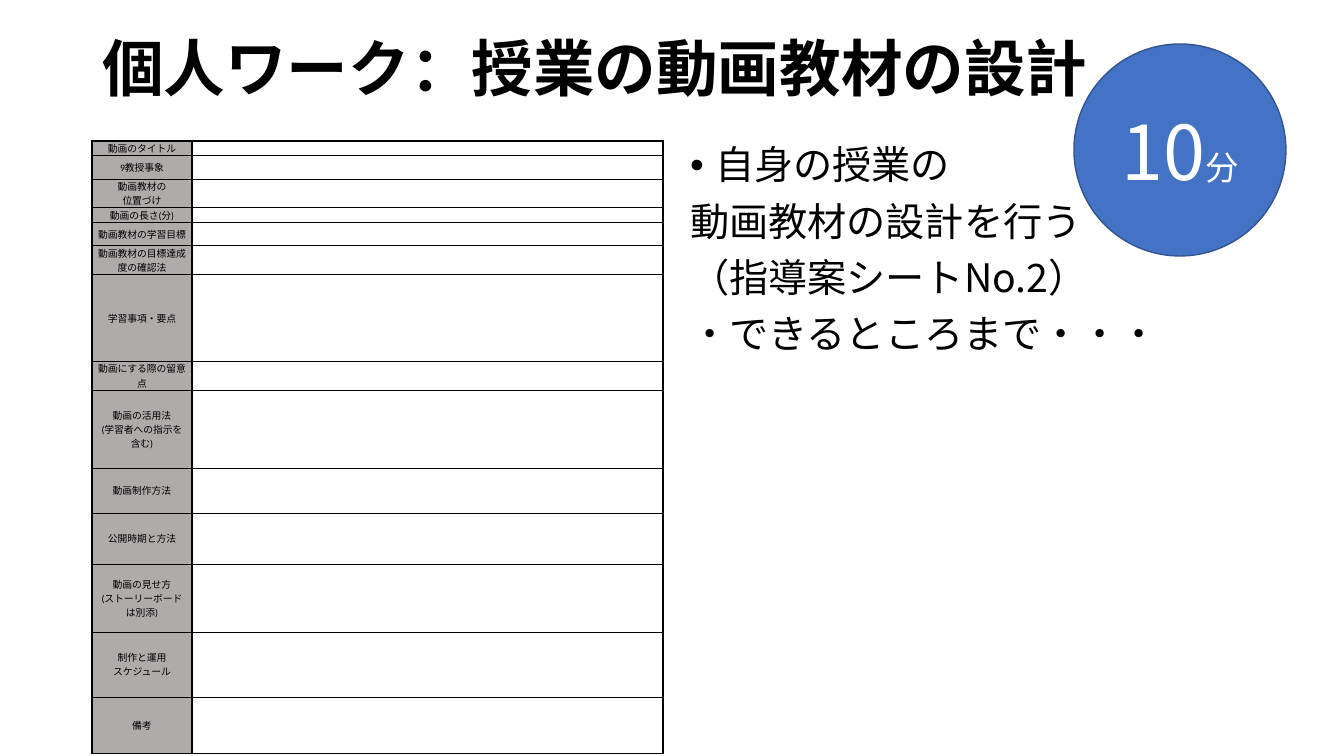
import pptx
import pptx.dml.color
import pptx.enum.shapes
import pptx.enum.text
import pptx.oxml.ns
import pptx.util
from lxml import etree

PX = 914400 / 100.8
JAPANESE = "Noto Sans CJK JP"
LEFT = pptx.enum.text.PP_ALIGN.LEFT
CENTER = pptx.enum.text.PP_ALIGN.CENTER
MIDDLE = pptx.enum.text.MSO_ANCHOR.MIDDLE

WORKSHEET_ROWS = [
    ("動画のタイトル", 14),
    ("9教授事象", 24),
    ("動画教材の\n位置づけ", 28),
    ("動画の長さ(分)", 15),
    ("動画教材の学習目標", 23),
    ("動画教材の目標達成度の確認法", 29),
    ("学習事項・要点", 87),
    ("動画にする際の留意点", 29),
    ("動画の活用法\n(学習者への指示を含む)", 78),
    ("動画制作方法", 45),
    ("公開時期と方法", 51),
    ("動画の見せ方\n(ストーリーボードは別添)", 68),
    ("制作と運用\nスケジュール", 65),
    ("備考", 56),
]
INSTRUCTIONS = [
    "自身の授業の",
    "動画教材の設計を行う",
    "（指導案シートNo.2）",
    "・できるところまで・・・",
]


def px(length):
    return pptx.util.Emu(round(length * PX))


def color(value):
    return pptx.dml.color.RGBColor.from_string(value)


def add_xml(parent, tag, **attributes):
    return etree.SubElement(parent, pptx.oxml.ns.qn(tag), attributes)


def style_font(font, size, name, fill="000000", bold=False):
    font.size = pptx.util.Pt(size)
    font.bold = bold
    font.color.rgb = color(fill)
    font.name = name
    add_xml(font._element, "a:ea", typeface=JAPANESE)


def place(shape, left, top, width, height):
    shape.left, shape.top = px(left), px(top)
    shape.width, shape.height = px(width), px(height)


def fill_title(title, text):
    place(title, 92, 22, 1159, 99)
    title.text_frame.text = text
    title.text_frame.vertical_anchor = MIDDLE
    heading = title.text_frame.paragraphs[0]
    heading.alignment = LEFT
    heading.line_spacing = 0.9
    style_font(heading.font, 44, JAPANESE, bold=True)


def fill_instructions(body, lines):
    place(body, 680, 141, 572, 539)
    body.text_frame.text = "\n".join(lines)
    for index, line in enumerate(body.text_frame.paragraphs):
        line.line_spacing = 0.9
        line.space_before = pptx.util.Pt(10)
        properties = line._p.get_or_add_pPr()
        indent = 0 if index else px(25)
        properties.set("marL", str(indent))
        properties.set("indent", str(-indent))
        if index:
            add_xml(properties, "a:buNone")
        else:
            add_xml(properties, "a:buChar", char="•")
        style_font(line.font, 28, JAPANESE)


def draw_borders(cell):
    properties = cell._tc.get_or_add_tcPr()
    for position, side in enumerate(("a:lnL", "a:lnR", "a:lnT", "a:lnB")):
        border = etree.Element(pptx.oxml.ns.qn(side), w=str(pptx.util.Pt(1)))
        fill = add_xml(border, "a:solidFill")
        add_xml(fill, "a:srgbClr", val="000000")
        properties.insert(position, border)


def fill_cell(cell, text, background):
    cell.text = text
    cell.vertical_anchor = MIDDLE
    cell.margin_left = cell.margin_right = px(6)
    cell.margin_top = cell.margin_bottom = 0
    if background:
        cell.fill.solid()
        cell.fill.fore_color.rgb = color(background)
    else:
        cell.fill.background()
    for line in cell.text_frame.paragraphs:
        line.alignment = CENTER
        style_font(line.font, 7, "Calibri")
        if not text:
            add_xml(line._p, "a:endParaRPr", sz="700")
    draw_borders(cell)


def add_worksheet(slide, rows):
    total = sum(height for _, height in rows)
    frame = slide.shapes.add_table(
        len(rows), 2, px(92), px(141), px(571), px(total))
    worksheet = frame.table
    worksheet.first_row = worksheet.horz_banding = False
    worksheet.columns[0].width = px(100)
    worksheet.columns[1].width = px(471)
    for index, (label, height) in enumerate(rows):
        worksheet.rows[index].height = px(height)
        fill_cell(worksheet.cell(index, 0), label, "AFABAB")
        fill_cell(worksheet.cell(index, 1), "", None)


def add_time_badge(slide, minutes, unit):
    badge = slide.shapes.add_shape(
        pptx.enum.shapes.MSO_SHAPE.OVAL, px(1074), px(44), px(212), px(212))
    badge.shadow.inherit = False
    badge.fill.solid()
    badge.fill.fore_color.rgb = color("4472C4")
    badge.line.color.rgb = color("325491")
    badge.line.width = pptx.util.Pt(1)
    badge.text_frame.vertical_anchor = MIDDLE
    badge.text_frame.word_wrap = True
    duration = badge.text_frame.paragraphs[0]
    duration.alignment = CENTER
    for text, size in ((minutes, 54), (unit, 24)):
        run = duration.add_run()
        run.text = text
        style_font(run.font, size, JAPANESE, "FFFFFF")


def main():
    deck = pptx.Presentation()
    deck.slide_width, deck.slide_height = px(1344), px(756)
    slide = deck.slides.add_slide(deck.slide_layouts[1])
    fill_title(slide.shapes.title, "個人ワーク：授業の動画教材の設計")
    add_worksheet(slide, WORKSHEET_ROWS)
    fill_instructions(slide.placeholders[1], INSTRUCTIONS)
    add_time_badge(slide, "10", "分")
    deck.save("out.pptx")


if __name__ == "__main__":
    main()
